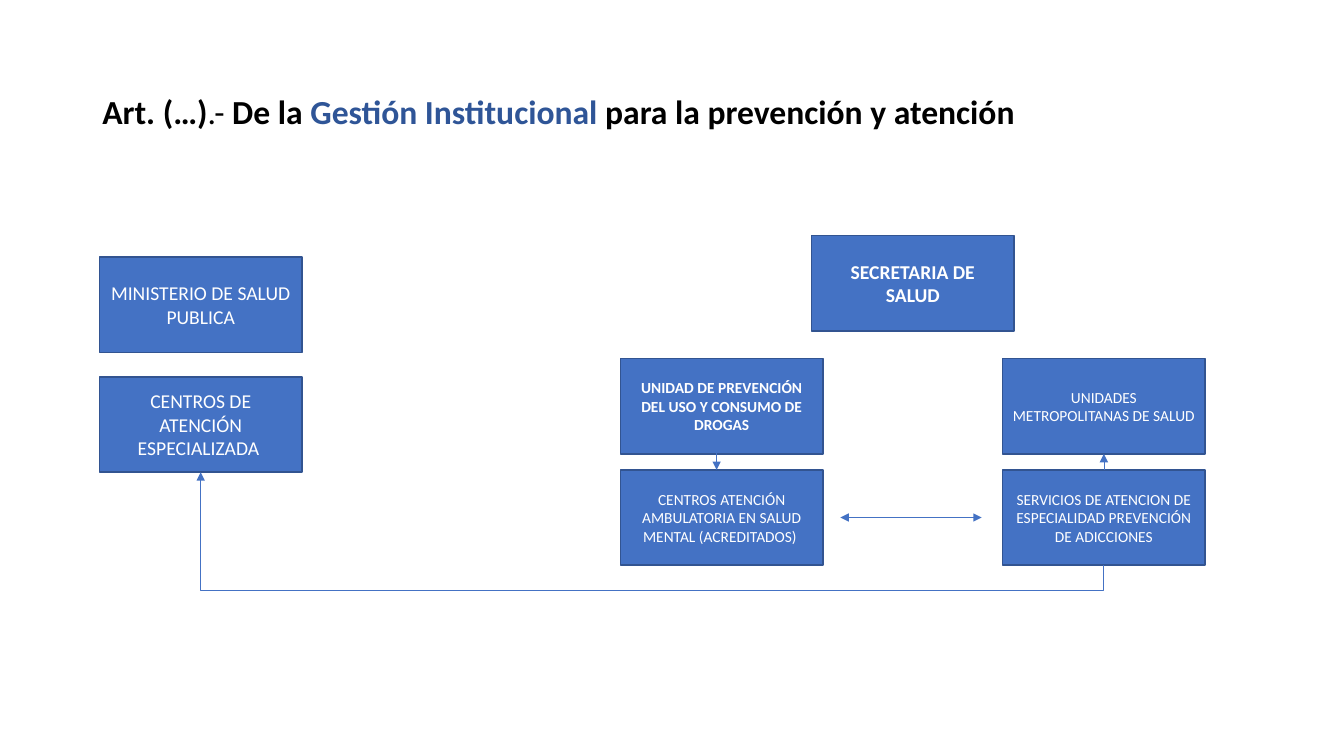
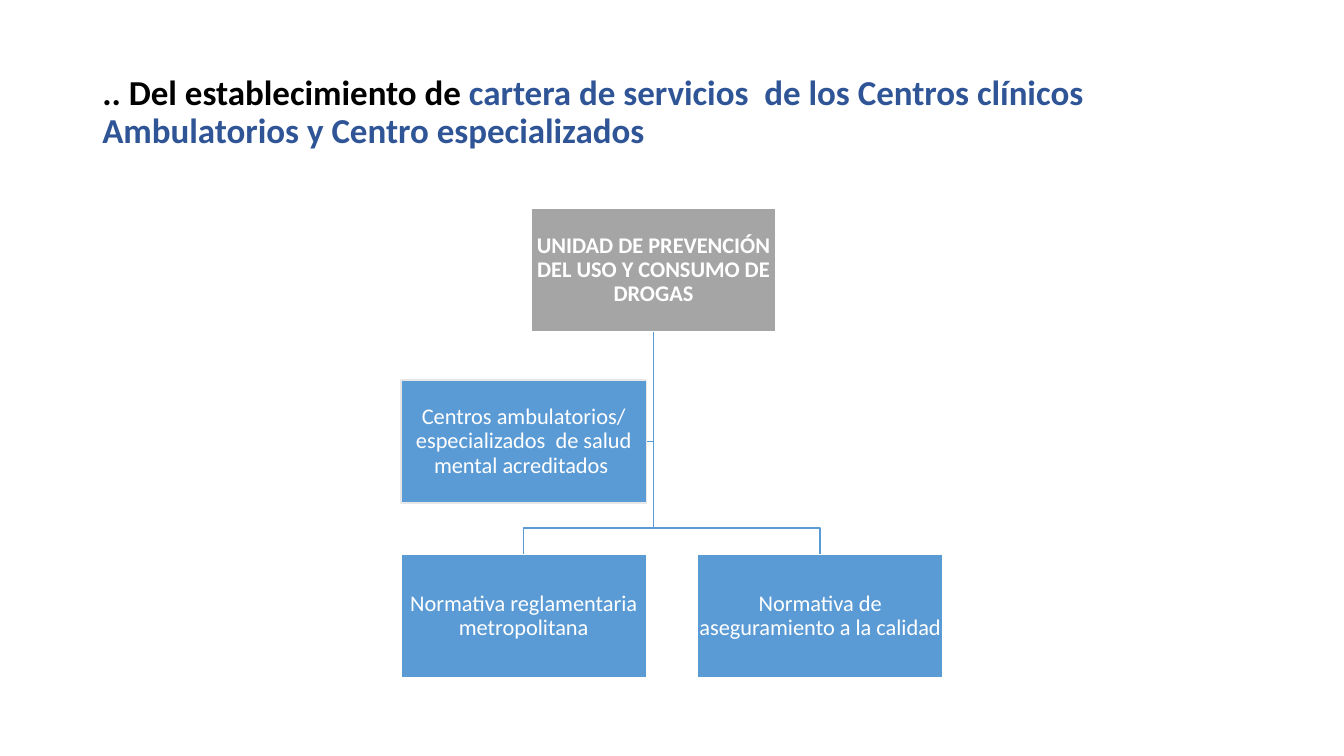
"""Build two slides on health care management and service charts."""
from pptx import Presentation
from pptx.dml.color import RGBColor as RGB
from pptx.enum.shapes import MSO_CONNECTOR as Link, MSO_SHAPE as Shape
from pptx.enum.text import MSO_ANCHOR as Anchor, PP_ALIGN as Align
from pptx.oxml.ns import qn
from pptx.oxml.xmlchemy import OxmlElement as Node
from pptx.util import Cm, Pt

FONT = "Calibri"
BLACK = RGB(0x00, 0x00, 0x00)
WHITE = RGB(0xFF, 0xFF, 0xFF)
NAVY = RGB(0x2F, 0x55, 0x97)
BLUE = RGB(0x44, 0x72, 0xC4)
EDGE = RGB(0x32, 0x54, 0x91)
SKY = RGB(0x5B, 0x9B, 0xD5)
GRAY = RGB(0xA5, 0xA5, 0xA5)
PALE = RGB(0xE7, 0xE7, 0xE7)


def style(run, size, color, bold):
    """Set the font of a run."""
    font = run.font
    font.name, font.size, font.bold = FONT, Pt(size), bold
    font.color.rgb = color


def add_title(slide, size, parts):
    """Add a title made of (text, colour, bold) parts."""
    frame = slide.shapes.add_textbox(Cm(2.33), Cm(1.02), Cm(29.21), Cm(3.68)).text_frame
    frame.word_wrap = True
    frame.vertical_anchor = Anchor.MIDDLE
    para = frame.paragraphs[0]
    para.line_spacing = 0.9
    for text, color, bold in parts:
        run = para.add_run()
        run.text = text
        style(run, size, color, bold)


def add_box(slide, text, place, dims, size, bold=False, fill=BLUE, edge=EDGE):
    """Add a filled box with centred text."""
    box = slide.shapes.add_shape(Shape.RECTANGLE, *map(Cm, place + dims))
    box.shadow.inherit = False
    box.fill.solid()
    box.fill.fore_color.rgb = fill
    box.line.color.rgb = edge
    box.line.width = Pt(1)
    frame = box.text_frame
    frame.word_wrap = True
    frame.vertical_anchor = Anchor.MIDDLE
    para = frame.paragraphs[0]
    para.text = text
    para.alignment = Align.CENTER
    style(para.runs[0], size, WHITE, bold)
    return box


def add_node(slide, text, place, dims, fill=SKY, edge=WHITE, bold=False):
    """Add a chart node with tight margins."""
    frame = add_box(slide, text, place, dims, 16, bold, fill, edge).text_frame
    frame.margin_left = frame.margin_right = Cm(0.03)
    frame.margin_top = frame.margin_bottom = Cm(0.03)
    frame.paragraphs[0].line_spacing = 0.9


def add_arrow(slide, start, end, kind=Link.STRAIGHT, both=False):
    """Add a thin arrow between two points."""
    arrow = slide.shapes.add_connector(kind, *start, *end)
    arrow.line.color.rgb = BLUE
    arrow.line.width = Pt(0.5)
    props = arrow._element.spPr
    for name in ("a:headEnd", "a:tailEnd") if both else ("a:tailEnd",):
        tip = Node(name)
        tip.set("type", "triangle")
        props.find(qn("a:ln")).append(tip)
    props.append(Node("a:effectLst"))
    return arrow


def base(box):
    """Return the middle of a box's lower side."""
    return box.left + box.width // 2, box.top + box.height


def add_loop(slide, source, target, drop):
    """Join two lower sides with an elbow arrow that runs below both."""
    (right, low), (left, high) = base(source), base(target)
    arrow = add_arrow(slide, (right, low), (left, high), Link.ELBOW)
    arrow.begin_connect(source, 2)
    arrow.end_connect(target, 2)
    wide, tall = right - left, low - high
    frame = arrow._element.spPr.find(qn("a:xfrm"))
    for name in ("flipH", "flipV"):
        frame.attrib.pop(name, None)
    frame.set("rot", "5400000")
    frame.set("flipH", "1")
    arrow.left = (left + right - tall) // 2
    arrow.top = (low + high - wide) // 2
    arrow.width, arrow.height = tall, wide
    guide = Node("a:gd")
    guide.set("name", "adj1")
    guide.set("fmla", f"val {-round(100000 * drop / tall)}")
    geom = arrow._element.spPr.find(qn("a:prstGeom"))
    geom.get_or_add_avLst().append(guide)


def add_wire(slide, points):
    """Add an open line through the points."""
    first, *rest = [(Cm(x), Cm(y)) for x, y in points]
    path = slide.shapes.build_freeform(*first)
    path.add_line_segments(rest, close=False)
    wire = path.convert_to_shape()
    wire.shadow.inherit = False
    wire.fill.background()
    wire.line.color.rgb = SKY
    wire.line.width = Pt(1)


def draw_units(slide):
    """Draw the slide on the units and their links."""
    add_title(slide, 24, [
        ("Art. (…)", BLACK, True), (".- ", BLACK, False), ("De la ", BLACK, True),
        ("Gestión Institucional ", NAVY, True),
        ("para la prevención y atención", BLACK, True)])
    dims = (5.1, 2.4)
    west, mid, east = 2.51, 15.64, 25.27
    upper, lower = 9.04, 11.84
    add_box(slide, "SECRETARIA DE SALUD", ((mid + east) / 2, 5.94), dims, 14, True)
    add_box(slide, "UNIDAD DE PREVENCIÓN DEL USO Y CONSUMO DE DROGAS",
            (mid, upper), dims, 11, True)
    add_box(slide, "CENTROS ATENCIÓN AMBULATORIA EN SALUD MENTAL (ACREDITADOS) ",
            (mid, lower), dims, 11)
    metro = add_box(slide, "UNIDADES METROPOLITANAS DE SALUD", (east, upper), dims, 11)
    care = add_box(slide, "SERVICIOS DE ATENCION DE ESPECIALIDAD PREVENCIÓN DE ADICCIONES",
                   (east, lower), dims, 11)
    add_box(slide, "MINISTERIO DE SALUD PUBLICA", (west, 6.48), dims, 14)
    center = add_box(slide, "CENTROS DE ATENCIÓN ESPECIALIZADA ", (west, 9.5), dims, 14)
    add_loop(slide, care, center, Cm(0.63))
    add_arrow(slide, (Cm(18.06), Cm(11.23)), (Cm(18.06), Cm(lower)))
    rise = add_arrow(slide, (base(care)[0], care.top), base(metro))
    rise.begin_connect(care, 0)
    rise.end_connect(metro, 2)
    level = Cm(lower + dims[1] / 2)
    add_arrow(slide, (Cm(21.18), level), (Cm(24.74), level), both=True)


def draw_tree(slide):
    """Draw the slide with the service tree."""
    add_title(slide, 25, [
        (".. Del establecimiento de ", BLACK, True),
        ("cartera de servicios  de los Centros clínicos "
         "Ambulatorios y Centro especializados", NAVY, True)])
    dims = wide, tall = 6.18, 3.1
    left, root, right = 10.11, 13.38, 17.58
    top, side, low = 5.26, 9.58, 13.97
    trunk, start, bus = root + wide / 2, top + tall, 13.31
    tick = side + tall / 2
    add_wire(slide, [(trunk, start), (trunk, tick), (left + wide, tick)])
    for x in (right, left):
        leaf = x + wide / 2
        add_wire(slide, [(trunk, start), (trunk, bus), (leaf, bus), (leaf, low)])
    add_node(slide, "UNIDAD DE PREVENCIÓN DEL USO Y CONSUMO DE DROGAS",
             (root, top), dims, GRAY, bold=True)
    add_node(slide, "Normativa reglamentaria metropolitana", (left, low), dims)
    add_node(slide, "Normativa de aseguramiento a la calidad ", (right, low), dims)
    add_node(slide, "Centros ambulatorios/ especializados  de salud mental acreditados ",
             (left, side), dims, edge=PALE)


def main():
    """Build and save the deck."""
    deck = Presentation()
    deck.slide_width, deck.slide_height = Cm(33.87), Cm(19.05)
    for draw in (draw_units, draw_tree):
        draw(deck.slides.add_slide(deck.slide_layouts[6]))
    deck.save("out.pptx")


if __name__ == "__main__":
    main()
